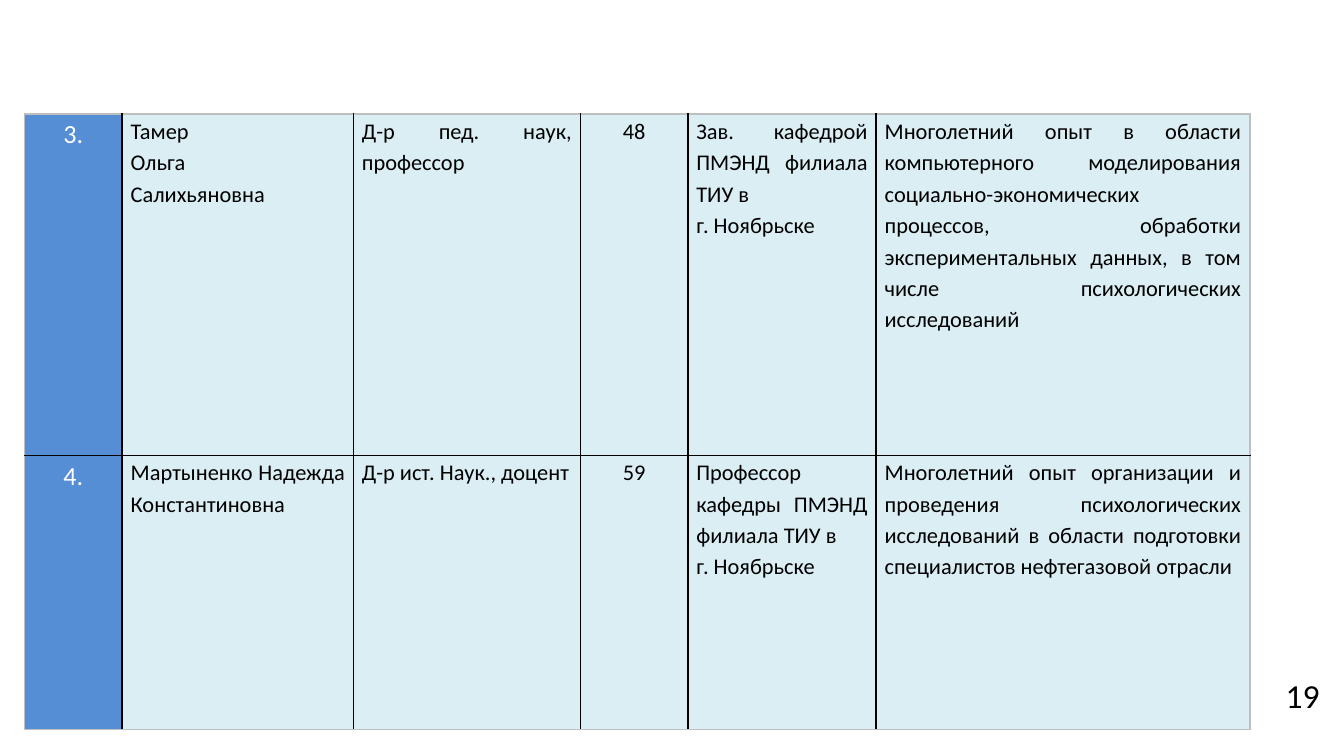
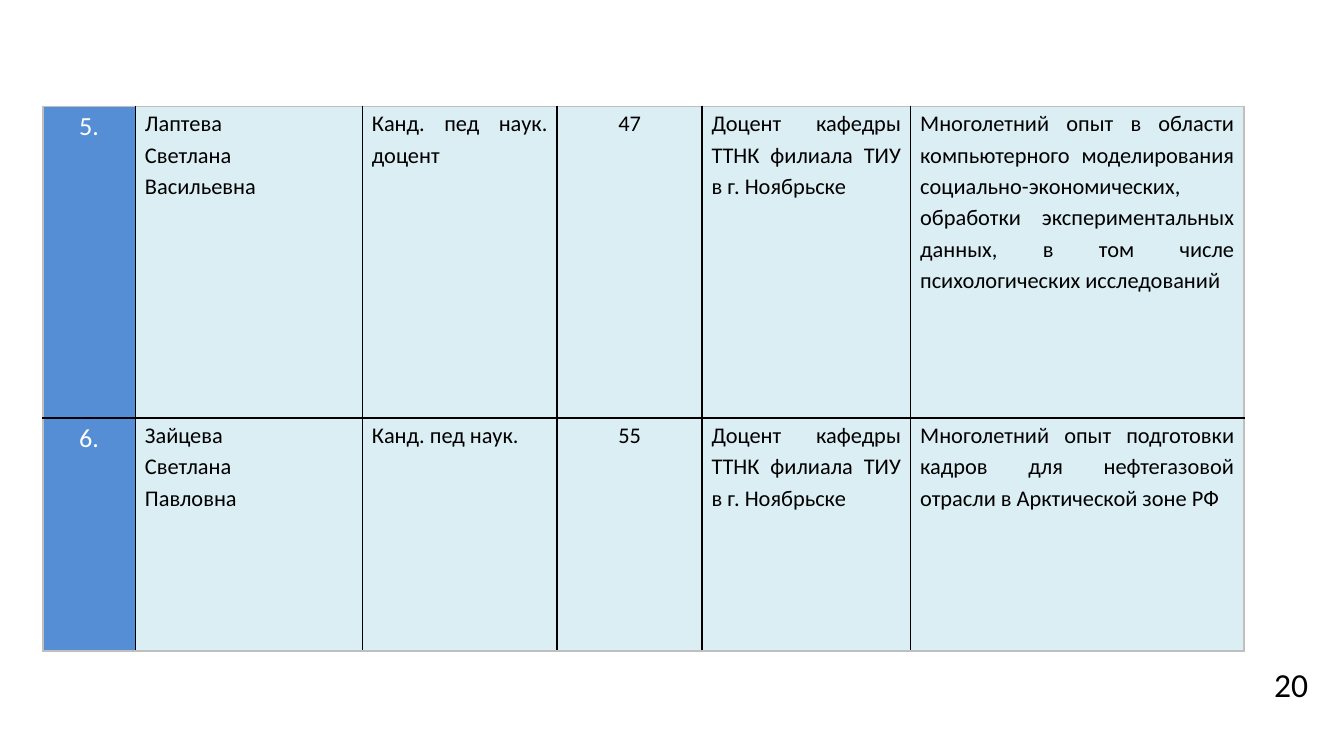
from lxml.etree import SubElement
from pptx import Presentation
from pptx.dml.color import RGBColor
from pptx.enum.text import MSO_ANCHOR as Anchor, MSO_AUTO_SIZE as AutoSize, PP_ALIGN as Align
from pptx.oxml.ns import qn
from pptx.util import Cm, Pt

BLACK = RGBColor(0x00, 0x00, 0x00)
WHITE = RGBColor(0xFF, 0xFF, 0xFF)
GREY = RGBColor(0xBF, 0xBF, 0xBF)
BLUE = RGBColor(0x55, 0x8E, 0xD5)
PALE_BLUE = RGBColor(0xDB, 0xEE, 0xF4)
FONT = "Calibri"
NUMBER_COLUMN, AGE_COLUMN = 0, 3

STAFF_PAGES = [
    {
        "page_number": "19",
        "number_at": (24.05, 12.52),
        "table_at": (0.46, 2.16),
        "columns": [1.85, 4.37, 4.29, 2.03, 3.56, 7.06],
        "rows": [6.45, 5.18],
        "margin": 0.16,
        "staff": [
            ["3.", "Тамер\nОльга\nСалихьяновна", "Д-р пед. наук, профессор", "48",
             "Зав. кафедрой ПМЭНД филиала ТИУ в\nг. Ноябрьске",
             "Многолетний опыт в области компьютерного моделирования "
             "социально-экономических процессов, обработки экспериментальных данных, "
             "в том числе психологических исследований"],
            ["4.", "Мартыненко Надежда Константиновна", "Д-р ист. Наук., доцент", "59",
             "Профессор кафедры ПМЭНД филиала ТИУ в\nг. Ноябрьске",
             "Многолетний опыт организации и проведения психологических исследований "
             "в области подготовки специалистов нефтегазовой отрасли"],
        ],
    },
    {
        "page_number": "20",
        "number_at": (23.83, 12.32),
        "table_at": (0.81, 2.01),
        "columns": [1.75, 4.29, 3.68, 2.74, 3.94, 6.3],
        "rows": [5.89, 4.4],
        "margin": 0.18,
        "staff": [
            ["5.", "Лаптева\nСветлана\nВасильевна", "Канд. пед наук. доцент", "47",
             "Доцент кафедры ТТНК филиала ТИУ в г. Ноябрьске",
             "Многолетний опыт в области компьютерного моделирования "
             "социально-экономических, обработки экспериментальных данных, "
             "в том числе психологических исследований"],
            ["6.", "Зайцева\nСветлана\nПавловна", "Канд. пед наук.", "55",
             "Доцент кафедры ТТНК филиала ТИУ в г. Ноябрьске",
             "Многолетний опыт подготовки кадров для нефтегазовой отрасли "
             "в Арктической зоне РФ"],
        ],
    },
]


class StaffDeck:
    """Holds the deck, the current page and the shared text style."""

    def __init__(self):
        self.deck = Presentation()
        self.deck.slide_width, self.deck.slide_height = Cm(25.4), Cm(14.29)
        self.page = None

    def add_page(self):
        self.page = self.deck.slides.add_slide(self.deck.slide_layouts[6])

    def set_text(self, frame, text, size, color=BLACK, align=Align.JUSTIFY):
        frame.text = text
        for para in frame.paragraphs:
            para.alignment = align
            para.line_spacing = 1.15
            for span in para.runs:
                span.font.name = FONT
                span.font.size = Pt(size)
                span.font.color.rgb = color

    def add_borders(self, cell, colors):
        """Draw the left, right, top and bottom edges in the given colours."""
        properties = cell._tc.get_or_add_tcPr()
        for side, color in zip("LRTB", colors):
            line = SubElement(properties, qn(f"a:ln{side}"), w=str(Pt(1)))
            fill = SubElement(line, qn("a:solidFill"))
            SubElement(fill, qn("a:srgbClr"), val=str(color))

    def fill_cell(self, cell, text, column, margin):
        is_number = column == NUMBER_COLUMN
        cell.margin_left = cell.margin_right = Cm(margin)
        cell.margin_top = cell.margin_bottom = 0
        cell.vertical_anchor = Anchor.TOP
        cell.fill.solid()
        cell.fill.fore_color.rgb = BLUE if is_number else PALE_BLUE
        centred = column in (NUMBER_COLUMN, AGE_COLUMN)
        self.set_text(cell.text_frame, text, 14 if is_number else 12,
                      WHITE if is_number else BLACK,
                      Align.CENTER if centred else Align.JUSTIFY)

    def add_staff_table(self, place, columns, rows, margin, staff):
        left, top = place
        table = self.page.shapes.add_table(
            len(rows), len(columns), Cm(left), Cm(top),
            Cm(sum(columns)), Cm(sum(rows))).table
        table.first_row = table.horz_banding = False
        for column, width in zip(table.columns, columns):
            column.width = Cm(width)
        for row, height in zip(table.rows, rows):
            row.height = Cm(height)
        for i, person in enumerate(staff):
            for j, text in enumerate(person):
                outer = (j == 0, j == len(columns) - 1, i == 0, i == len(rows) - 1)
                cell = table.cell(i, j)
                self.add_borders(cell, [GREY if edge else BLACK for edge in outer])
                self.fill_cell(cell, text, j, margin)

    def add_page_number(self, text, place):
        left, top = place
        box = self.page.shapes.add_textbox(Cm(left), Cm(top), Cm(1.17), Cm(1.09))
        box.text_frame.word_wrap = False
        box.text_frame.auto_size = AutoSize.SHAPE_TO_FIT_TEXT
        self.set_text(box.text_frame, text, 18)


def main():
    builder = StaffDeck()
    for content in STAFF_PAGES:
        builder.add_page()
        builder.add_staff_table(content["table_at"], content["columns"],
                                content["rows"], content["margin"], content["staff"])
        builder.add_page_number(content["page_number"], content["number_at"])
    builder.deck.save("out.pptx")


if __name__ == "__main__":
    main()
